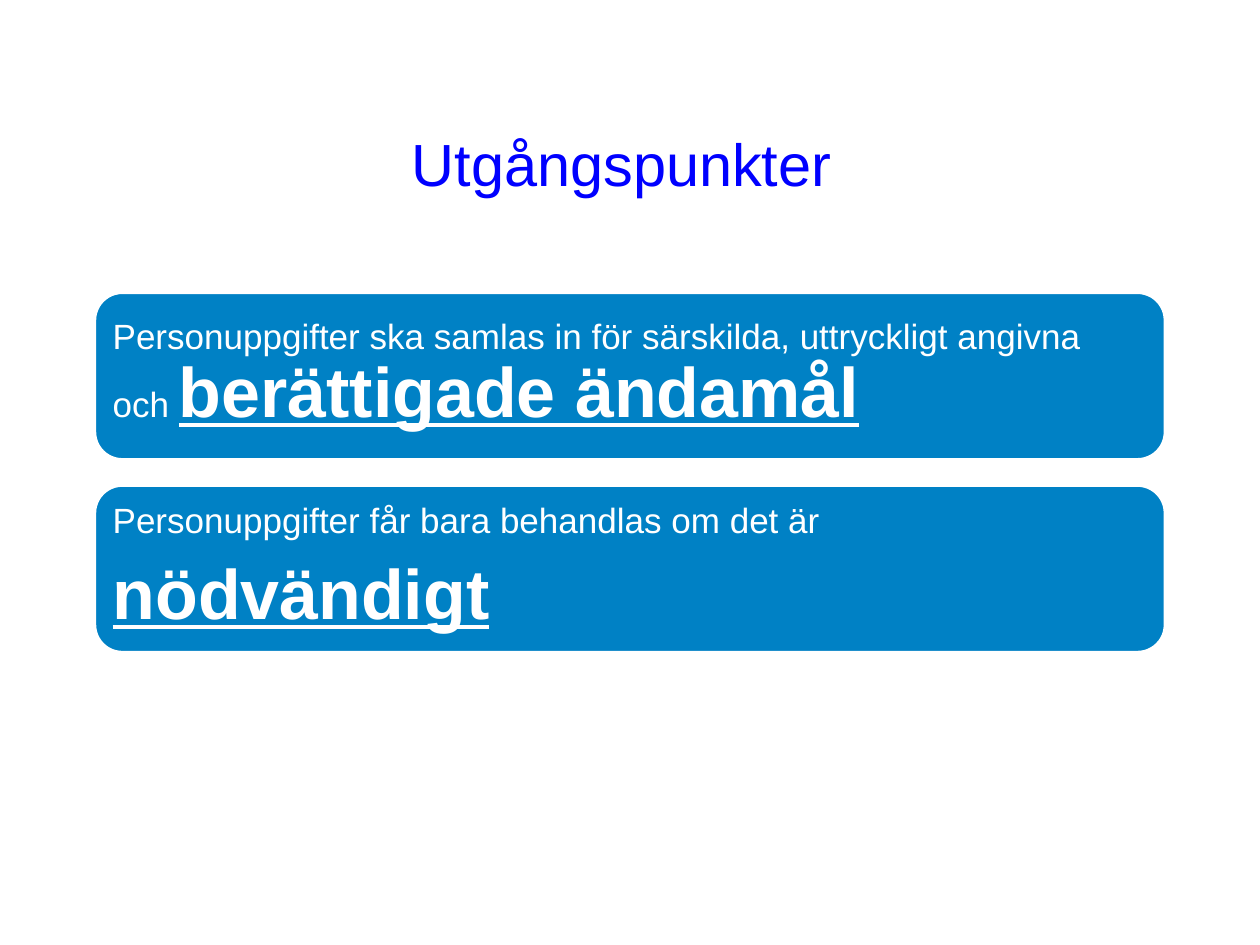
from pptx import Presentation
from pptx.dml.color import RGBColor
from pptx.enum.shapes import MSO_SHAPE
from pptx.enum.text import MSO_ANCHOR, PP_ALIGN
from pptx.util import Inches, Pt


def rgb(value):
    return RGBColor.from_string(value)


def add_run(p, text, size, color, strong=False):
    r = p.add_run()
    r.text = text
    r.font.name = "Arial"
    r.font.size = Pt(size)
    r.font.bold = strong
    r.font.underline = strong
    r.font.color.rgb = rgb(color)


prs = Presentation()
prs.slide_width = Inches(10)
prs.slide_height = Inches(7.5)
s = prs.slides.add_slide(prs.slide_layouts[5])

title = s.shapes.title
title.left, title.top = Inches(0.75), Inches(0.67)
title.width, title.height = Inches(8.5), Inches(1.25)
tf = title.text_frame
tf.vertical_anchor = MSO_ANCHOR.MIDDLE
p = tf.paragraphs[0]
p.alignment = PP_ALIGN.CENTER
add_run(p, "Utgångspunkter ", 34, "0000FF")

principles = [
    [[("Personuppgifter ska samlas in för särskilda, uttryckligt angivna och ", 20, False),
      ("berättigade ändamål", 40, True)]],
    [[("Personuppgifter får bara behandlas om det är", 20, False)],
     [("nödvändigt", 40, True)]],
]

for i, paragraphs in enumerate(principles):
    sp = s.shapes.add_shape(MSO_SHAPE.ROUNDED_RECTANGLE, Inches(0.75),
                            Inches(2.32 + i * 1.53), Inches(8.5), Inches(1.33))
    sp.shadow.inherit = False
    sp.fill.solid()
    sp.fill.fore_color.rgb = rgb("0081C5")
    sp.line.color.rgb = rgb("FFFFFF")
    sp.line.width = Pt(2)
    tf = sp.text_frame
    tf.word_wrap = True
    tf.vertical_anchor = MSO_ANCHOR.MIDDLE
    tf.margin_left = tf.margin_right = Inches(0.08)
    tf.margin_top = tf.margin_bottom = Inches(0.08)
    for j, runs in enumerate(paragraphs):
        p = tf.add_paragraph() if j else tf.paragraphs[0]
        p.alignment = PP_ALIGN.LEFT
        p.line_spacing = 0.9
        if j < len(paragraphs) - 1:
            p.space_after = Pt(10)
        for text, size, strong in runs:
            add_run(p, text, size, "FFFFFF", strong)

prs.save("out.pptx")
